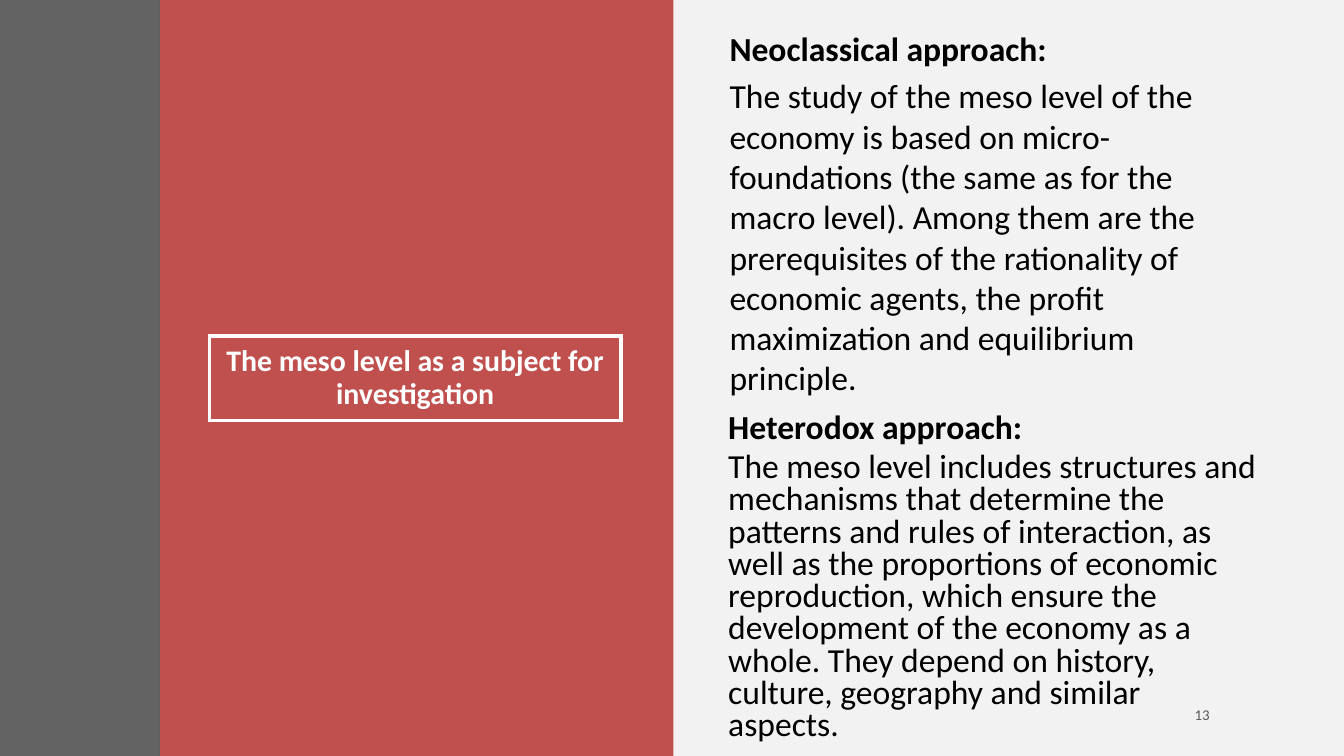
from dataclasses import dataclass

from lxml import etree
from pptx import Presentation
from pptx.dml.color import RGBColor
from pptx.enum.shapes import MSO_SHAPE
from pptx.enum.text import MSO_ANCHOR, PP_ALIGN
from pptx.oxml.ns import qn
from pptx.shapes.autoshape import Shape
from pptx.slide import Slide
from pptx.util import Inches, Pt

RECTANGLE = MSO_SHAPE.RECTANGLE
TOP, MIDDLE = MSO_ANCHOR.TOP, MSO_ANCHOR.MIDDLE
LEFT, CENTER = PP_ALIGN.LEFT, PP_ALIGN.CENTER


@dataclass(frozen=True)
class Theme:
    font: str = "Calibri"
    background: str = "F2F2F2"
    accent: str = "C0504D"
    dark: str = "404040"
    white: str = "FFFFFF"
    text: str = "000000"
    muted: str = "595959"
    title_size: float = 16
    body_size: float = 18
    number_size: float = 8


THEME = Theme()


@dataclass(frozen=True)
class Box:
    left: float
    top: float
    width: float
    height: float

    def lengths(self) -> list[int]:
        return [Inches(value) for value in (self.left, self.top, self.width, self.height)]


@dataclass(frozen=True)
class Panel:
    box: Box
    color: str
    opacity: int = 100


@dataclass(frozen=True)
class TextBlock:
    box: Box
    paragraphs: tuple[str, ...]
    size: float
    color: str
    bold_first: bool = False
    alignment: PP_ALIGN = LEFT
    anchor: MSO_ANCHOR = TOP
    line_spacing: float = 1.0
    space_between: float = 0
    outline: str = ""


SLIDE = Box(0, 0, 10, 10 * 9 / 16)
PARAGRAPH_GAP = 0.2 * THEME.body_size

PANELS = (
    Panel(Box(1.19, 0, 3.82, SLIDE.height), THEME.accent),
    Panel(Box(0, 0, 1.19, SLIDE.height), THEME.dark, opacity=80),
)

TEXT_BLOCKS = (
    # Framed title
    TextBlock(
        Box(1.56, 2.5, 3.06, 0.63),
        ("The meso level as a subject for investigation",),
        THEME.title_size, THEME.white, bold_first=True, alignment=CENTER,
        anchor=MIDDLE, line_spacing=0.9, outline=THEME.white,
    ),
    # The two approaches
    TextBlock(
        Box(5.33, 0.16, 4.14, 2.09),
        (
            "Neoclassical approach:",
            "The study of the meso level of the economy is based on "
            "micro-foundations (the same as for the macro level). Among them are "
            "the prerequisites of the rationality of economic agents, the profit "
            "maximization and equilibrium principle.",
        ),
        THEME.body_size, THEME.text, bold_first=True, space_between=PARAGRAPH_GAP,
    ),
    TextBlock(
        Box(5.32, 3.03, 4.13, 2.6),
        (
            "Heterodox approach:",
            "The meso level includes structures and mechanisms that determine the "
            "patterns and rules of interaction, as well as the proportions of "
            "economic reproduction, which ensure the development of the economy "
            "as a whole. They depend on history, culture, geography and similar "
            "aspects.",
        ),
        THEME.body_size, THEME.text, bold_first=True, line_spacing=0.8,
        space_between=PARAGRAPH_GAP,
    ),
    # Slide number
    TextBlock(
        Box(8.79, 5.17, 0.52, 0.3), ("13",),
        THEME.number_size, THEME.muted, anchor=MIDDLE,
    ),
)


def draw_panel(slide: Slide, panel: Panel) -> None:
    shape = slide.shapes.add_shape(RECTANGLE, *panel.box.lengths())
    shape.shadow.inherit = False
    shape.fill.solid()
    shape.fill.fore_color.rgb = RGBColor.from_string(panel.color)
    shape.line.fill.background()
    if panel.opacity < 100:
        color = shape.fill._xPr.find(".//" + qn("a:srgbClr"))
        etree.SubElement(color, qn("a:alpha"), val=str(panel.opacity * 1000))


def add_text_shape(slide: Slide, block: TextBlock) -> Shape:
    if not block.outline:
        return slide.shapes.add_textbox(*block.box.lengths())
    shape = slide.shapes.add_shape(RECTANGLE, *block.box.lengths())
    shape.shadow.inherit = False
    shape.fill.background()
    shape.line.color.rgb = RGBColor.from_string(block.outline)
    shape.line.width = Pt(2)
    # Square corners
    outline = shape.line._get_or_add_ln()
    etree.SubElement(outline, qn("a:miter"), lim="800000")
    return shape


def draw_text(slide: Slide, block: TextBlock) -> None:
    text_frame = add_text_shape(slide, block).text_frame
    text_frame.word_wrap = True
    text_frame.vertical_anchor = block.anchor
    text_frame.text = "\n".join(block.paragraphs)
    for index, paragraph in enumerate(text_frame.paragraphs):
        paragraph.alignment = block.alignment
        paragraph.line_spacing = block.line_spacing
        paragraph.space_before = Pt(block.space_between)
        for run in paragraph.runs:
            run.font.name = THEME.font
            run.font.size = Pt(block.size)
            run.font.bold = block.bold_first and index == 0
            run.font.color.rgb = RGBColor.from_string(block.color)


def main() -> None:
    presentation = Presentation()
    presentation.slide_width = Inches(SLIDE.width)
    presentation.slide_height = Inches(SLIDE.height)
    slide = presentation.slides.add_slide(presentation.slide_layouts[6])

    # Background and side panels
    slide.background.fill.solid()
    slide.background.fill.fore_color.rgb = RGBColor.from_string(THEME.background)
    for panel in PANELS:
        draw_panel(slide, panel)

    # Text
    for block in TEXT_BLOCKS:
        draw_text(slide, block)

    presentation.save("out.pptx")


if __name__ == "__main__":
    main()
